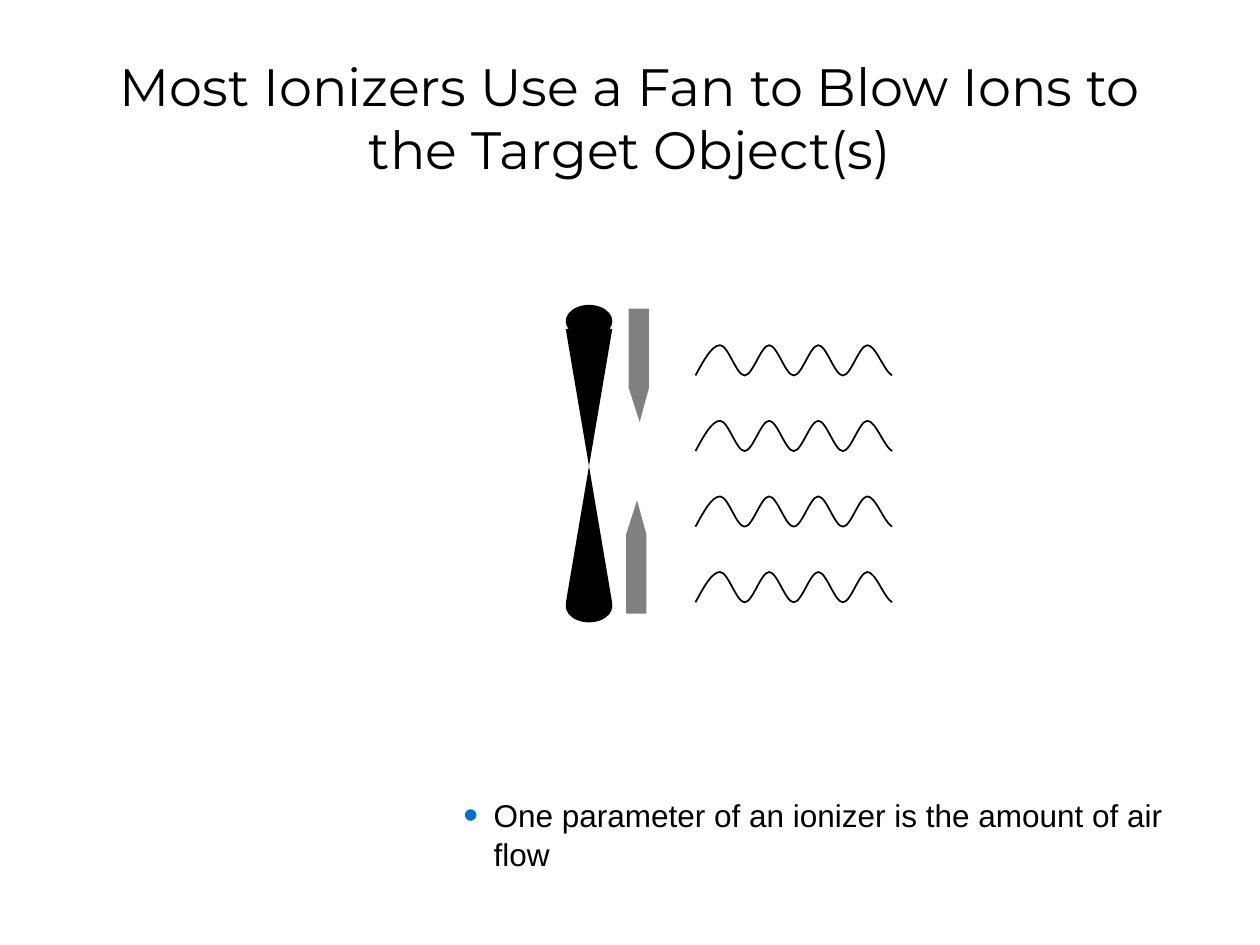
from dataclasses import dataclass

from lxml.etree import SubElement
from pptx import Presentation
from pptx.dml.color import RGBColor
from pptx.enum.shapes import MSO_SHAPE
from pptx.enum.text import MSO_ANCHOR, PP_ALIGN
from pptx.oxml.ns import qn
from pptx.util import Inches, Pt


@dataclass(frozen=True)
class Theme:
    ink: str = "000000"
    electrode: str = "808080"
    bullet: str = "0070C0"
    title_font: str = "Montserrat"
    body_font: str = "Arial"
    title_size: int = 30
    body_size: int = 18
    wave_width: int = 1


THEME = Theme()


def fill_shape(shape, color):
    shape.shadow.inherit = False
    shape.fill.solid()
    shape.fill.fore_color.rgb = RGBColor.from_string(color)
    shape.line.fill.background()


def add_filled(slide, kind, left, top, width, height, color):
    shape = slide.shapes.add_shape(
        kind, Inches(left), Inches(top), Inches(width), Inches(height))
    fill_shape(shape, color)
    return shape


def add_bullet(paragraph, color, indent):
    properties = paragraph._p.get_or_add_pPr()
    properties.set("marL", str(Inches(indent)))
    properties.set("indent", str(-Inches(indent)))
    bullet_color = SubElement(properties, qn("a:buClr"))
    SubElement(bullet_color, qn("a:srgbClr"), val=color)
    SubElement(properties, qn("a:buSzPct"), val="134000")
    SubElement(properties, qn("a:buFont"), typeface=THEME.body_font)
    SubElement(properties, qn("a:buChar"), char="•")


def add_text(slide, text, left, top, width, height, *, font, size,
             align=PP_ALIGN.LEFT, anchor=MSO_ANCHOR.TOP, spacing=None,
             bullet=None):
    box = slide.shapes.add_textbox(
        Inches(left), Inches(top), Inches(width), Inches(height))
    frame = box.text_frame
    frame.word_wrap = True
    frame.vertical_anchor = anchor
    paragraph = frame.paragraphs[0]
    if bullet:
        add_bullet(paragraph, bullet, indent=0.24)
    paragraph.alignment = align
    paragraph.line_spacing = spacing
    run = paragraph.add_run()
    run.text = text
    run.font.name = font
    run.font.size = Pt(size)
    run.font.color.rgb = RGBColor.from_string(THEME.ink)


def add_fan(slide):
    left, right, top, bottom = 4.49, 4.86, 2.61, 4.79
    for tip_top in (2.42, 4.68):
        add_filled(slide, MSO_SHAPE.OVAL, left, tip_top, right - left, 0.26, THEME.ink)
    builder = slide.shapes.build_freeform(Inches(left), Inches(bottom))
    corners = [(right, top), (left, top), (right, bottom)]
    builder.add_line_segments([(Inches(x), Inches(y)) for x, y in corners])
    fill_shape(builder.convert_to_shape(), THEME.ink)


def add_electrode(slide, left, body_top, point_top, points_down):
    width = 0.16
    add_filled(slide, MSO_SHAPE.RECTANGLE, left, body_top, width, 0.63, THEME.electrode)
    point = add_filled(slide, MSO_SHAPE.ISOSCELES_TRIANGLE, left, point_top,
                       width, 0.27, THEME.electrode)
    point.adjustments[0] = 0.46 if points_down else 0.54
    point.rotation = 180 if points_down else 0


def curve_segments(shape):
    """Turn the straight segments of a zigzag into a smooth wave."""
    points = [(int(point.get("x")), int(point.get("y")))
              for point in shape._element.iter(qn("a:pt"))]
    segments = list(shape._element.iter(qn("a:lnTo")))
    for index, segment in enumerate(segments):
        (x1, y1), (x2, y2) = points[index:index + 2]
        first_y, second_y = y1, y2
        if index == 0:
            first_y = (y1 + y2) // 2
        elif index == len(segments) - 1:
            second_y = y2 - (y2 - y1) // 6
        step = (x2 - x1) // 3
        segment.tag = qn("a:cubicBezTo")
        segment.remove(segment[0])
        for x, y in ((x1 + step, first_y), (x2 - step, second_y), (x2, y2)):
            SubElement(segment, qn("a:pt"), x=str(x), y=str(y))


def add_wave(slide, top):
    left, half_period, height, half_periods = 5.52, 0.195, 0.24, 8
    builder = slide.shapes.build_freeform(Inches(left), Inches(top + height))
    builder.add_line_segments(
        [(Inches(left + half_period * index),
          Inches(top if index % 2 else top + height))
         for index in range(1, half_periods + 1)], close=False)
    wave = builder.convert_to_shape()
    curve_segments(wave)
    wave.shadow.inherit = False
    wave.fill.background()
    wave.line.color.rgb = RGBColor.from_string(THEME.ink)
    wave.line.width = Pt(THEME.wave_width)


def main():
    presentation = Presentation()
    presentation.slide_width = Inches(10)
    presentation.slide_height = Inches(7.5)
    slide = presentation.slides.add_slide(presentation.slide_layouts[6])

    add_text(slide, "Most Ionizers Use a Fan to Blow Ions to the Target Object(s)",
             0.5, 0.3, 9, 1.25, font=THEME.title_font, size=THEME.title_size,
             align=PP_ALIGN.CENTER, anchor=MSO_ANCHOR.MIDDLE)
    add_electrode(slide, 4.97, body_top=4.24, point_top=3.97, points_down=False)
    add_fan(slide)
    for row in range(4):
        add_wave(slide, 2.74 + 0.6 * row)
    add_electrode(slide, 4.99, body_top=2.45, point_top=3.08, points_down=True)
    add_text(slide, "One parameter of an ionizer is the amount of air flow",
             3.58, 6.25, 6.17, 0.7, font=THEME.body_font, size=THEME.body_size,
             spacing=1.05, bullet=THEME.bullet)

    presentation.save("out.pptx")


if __name__ == "__main__":
    main()
